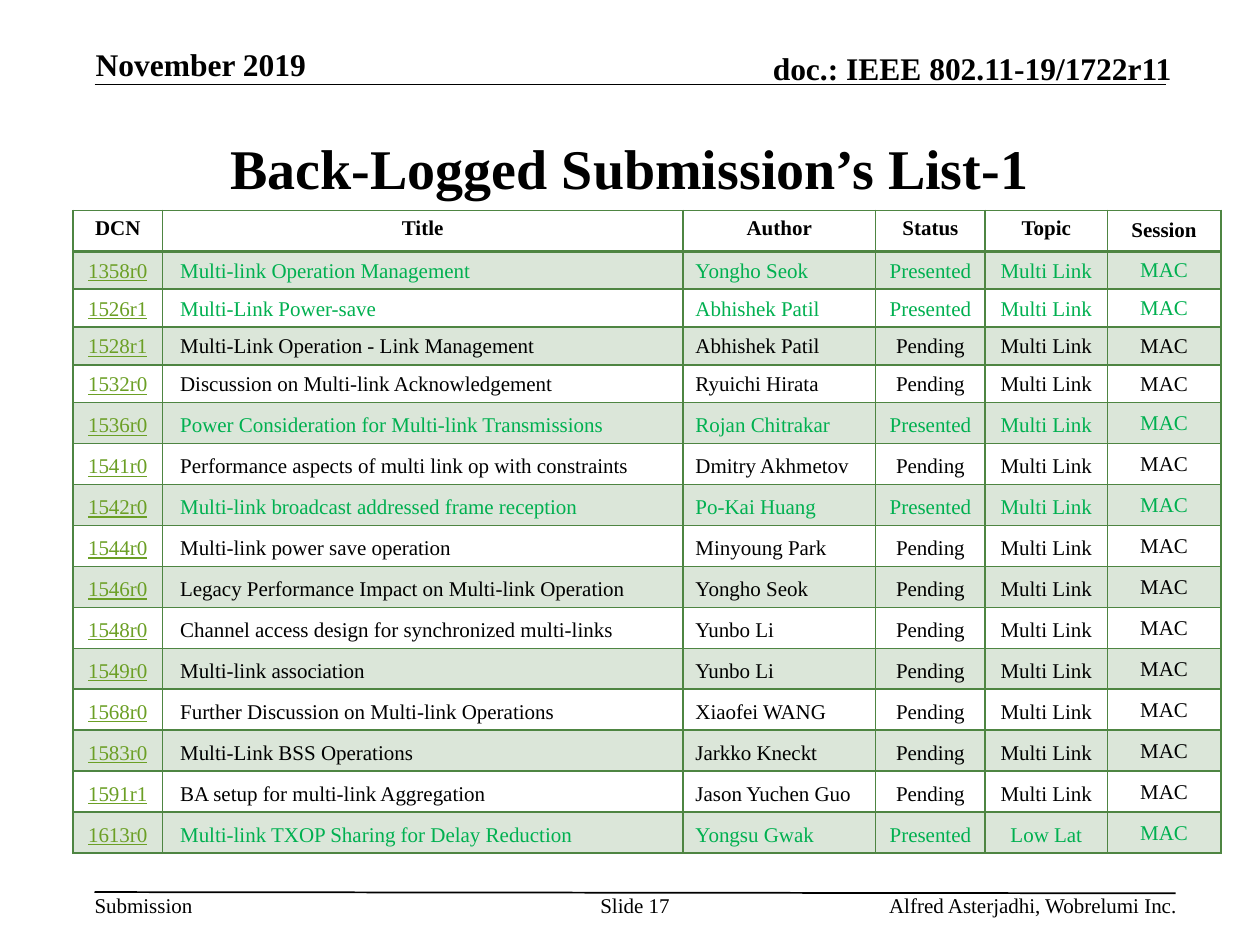
from lxml import etree
from pptx import Presentation
from pptx.dml.color import RGBColor
from pptx.enum import shapes, text
from pptx.oxml import ns
from pptx.util import Inches, Pt

COLORS = {"text": "000000", "done": "00B050", "link": "6B9F25", "green": "4E8542"}
LEFT, CENTER, RIGHT = text.PP_ALIGN.LEFT, text.PP_ALIGN.CENTER, text.PP_ALIGN.RIGHT
TOP, MIDDLE, BOTTOM = text.MSO_ANCHOR.TOP, text.MSO_ANCHOR.MIDDLE, text.MSO_ANCHOR.BOTTOM


def write(tf, words, size, align=LEFT, color="text", bold=False):
    tf.text = words
    p = tf.paragraphs[0]
    p.alignment = align
    font = p.runs[0].font
    font.name, font.size, font.bold = "Times New Roman", Pt(size), bold
    font.color.rgb = RGBColor.from_string(COLORS[color])
    return font


def add_border(cell, side, points):
    ln = etree.SubElement(cell._tc.get_or_add_tcPr(), ns.qn(f"a:{side}"), w=str(Pt(points)))
    fill = etree.SubElement(ln, ns.qn("a:solidFill"))
    etree.SubElement(fill, ns.qn("a:srgbClr"), val=COLORS["green"])


prs = Presentation()
prs.slide_width, prs.slide_height = Inches(10), Inches(7.5)
s = prs.slides.add_slide(prs.slide_layouts[5])

# Header and footer rules
for x1, y1, x2, y2 in [(0.75, 0.67, 9.25, 0.67), (0.75, 7.08, 9.33, 7.09)]:
    rule = s.shapes.add_connector(
        shapes.MSO_CONNECTOR.STRAIGHT, Inches(x1), Inches(y1), Inches(x2), Inches(y2))
    rule.line.color.rgb = RGBColor.from_string(COLORS["text"])
    rule.line.width = Pt(1)
    etree.SubElement(rule._element.spPr, ns.qn("a:effectLst"))

# Header and footer texts
for words, x, y, w, h, size, align, anchor in [
    ("November 2019", 0.76, 0.36, 2.05, 0.3, 18, LEFT, BOTTOM),
    ("doc.: IEEE 802.11-19/1722r11", 5.47, 0.39, 3.83, 0.3, 18, RIGHT, BOTTOM),
    ("Submission", 0.75, 7.08, 0.78, 0.2, 12, LEFT, TOP),
    ("Slide 17", 4.75, 7.08, 0.58, 0.4, 12, CENTER, TOP),
    ("Alfred Asterjadhi, Wobrelumi Inc.", 5.86, 7.08, 3.48, 0.2, 12, RIGHT, TOP),
]:
    tf = s.shapes.add_textbox(Inches(x), Inches(y), Inches(w), Inches(h)).text_frame
    tf.margin_left = tf.margin_top = tf.margin_right = tf.margin_bottom = 0
    tf.word_wrap = words not in ("Submission", "Slide 17")
    tf.vertical_anchor = anchor
    write(tf, words, size, align, bold=size == 18)

title = s.shapes.title
title.left, title.top, title.width, title.height = (
    Inches(0.75), Inches(0.75), Inches(8.5), Inches(1.16))
title.text_frame.vertical_anchor = MIDDLE
write(title.text_frame, "Back-Logged Submission’s List-1", 32, CENTER, bold=True)

# Submissions table
header = ["DCN", "Title", "Author", "Status", "Topic", "Session"]
submissions = [
    ("1358r0", "Multi-link Operation Management", "Yongho Seok", "Presented", "Multi Link"),
    ("1526r1", "Multi-Link Power-save", "Abhishek Patil", "Presented", "Multi Link"),
    ("1528r1", "Multi-Link Operation - Link Management", "Abhishek Patil", "Pending", "Multi Link"),
    ("1532r0", "Discussion on Multi-link Acknowledgement", "Ryuichi Hirata", "Pending", "Multi Link"),
    ("1536r0", "Power Consideration for Multi-link Transmissions", "Rojan Chitrakar", "Presented", "Multi Link"),
    ("1541r0", "Performance aspects of multi link op with constraints", "Dmitry Akhmetov", "Pending", "Multi Link"),
    ("1542r0", "Multi-link broadcast addressed frame reception", "Po-Kai Huang", "Presented", "Multi Link"),
    ("1544r0", "Multi-link power save operation", "Minyoung Park", "Pending", "Multi Link"),
    ("1546r0", "Legacy Performance Impact on Multi-link Operation", "Yongho Seok", "Pending", "Multi Link"),
    ("1548r0", "Channel access design for synchronized multi-links", "Yunbo Li", "Pending", "Multi Link"),
    ("1549r0", "Multi-link association", "Yunbo Li", "Pending", "Multi Link"),
    ("1568r0", "Further Discussion on Multi-link Operations", "Xiaofei WANG", "Pending", "Multi Link"),
    ("1583r0", "Multi-Link BSS Operations", "Jarkko Kneckt", "Pending", "Multi Link"),
    ("1591r1", "BA setup for multi-link Aggregation", "Jason Yuchen Guo", "Pending", "Multi Link"),
    ("1613r0", "Multi-link TXOP Sharing for Delay Reduction", "Yongsu Gwak", "Presented", "Low Lat"),
]
rows = [header] + [(*submission, "MAC") for submission in submissions]
table = s.shapes.add_table(
    len(rows), len(header), Inches(0.58), Inches(1.67), Inches(9.12), Inches(5.04)).table
table.first_row = table.horz_banding = False
for column, width in zip(table.columns, [0.71, 4.13, 1.53, 0.87, 0.97, 0.9]):
    column.width = Inches(width)

for i, row in enumerate(rows):
    table.rows[i].height = Inches(0.28) if 1 <= i <= 4 else Inches(0.65) // 2
    for j, words in enumerate(row):
        cell = table.cell(i, j)
        name = header[j]
        for side in ("lnL", "lnR", "lnT", "lnB"):
            thick = (i == 0 and side == "lnB") or (i == 1 and side == "lnT")
            add_border(cell, side, 2 if thick else 1)
        if i % 2:
            cell.fill.solid()
            cell.fill.fore_color.rgb = RGBColor.from_string(COLORS["green"])
            tint = cell._tc.tcPr.find(ns.qn("a:solidFill"))[0]
            etree.SubElement(tint, ns.qn("a:alpha"), val="20000")
        else:
            cell.fill.background()

        if i == 0:
            cell.vertical_anchor = MIDDLE if name == "Session" else TOP
            write(cell.text_frame, words, 12, CENTER, bold=True)
            continue
        cell.vertical_anchor = MIDDLE if name == "Session" else BOTTOM
        if name == "Session":
            cell.margin_left = cell.margin_top = cell.margin_right = Inches(0.01)
            cell.margin_bottom = 0
        elif name == "Title":
            cell.margin_left = Inches(0.14)
        color = "link" if name == "DCN" else "done" if "Presented" in row else "text"
        align = LEFT if name in ("Title", "Author") else CENTER
        font = write(cell.text_frame, words, 12, align, color)
        font.underline = name == "DCN"

prs.save("out.pptx")
